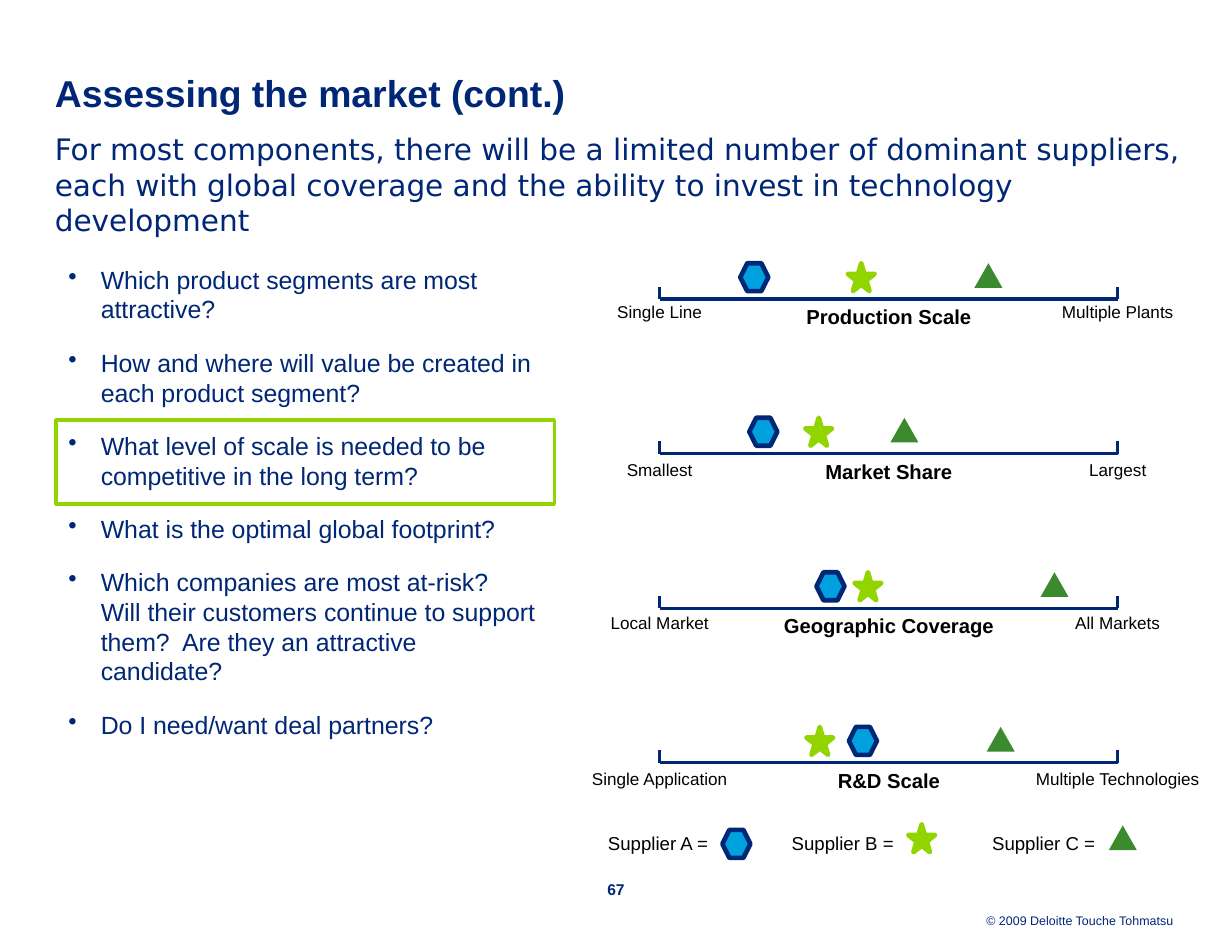
from dataclasses import dataclass

from lxml.etree import SubElement
from pptx import Presentation
from pptx.dml.color import RGBColor
from pptx.enum.shapes import MSO_CONNECTOR, MSO_SHAPE
from pptx.enum.text import MSO_ANCHOR, MSO_AUTO_SIZE, PP_ALIGN
from pptx.oxml.ns import qn
from pptx.util import Inches, Pt


@dataclass(frozen=True)
class Theme:
    navy: RGBColor = RGBColor(0x00, 0x27, 0x76)
    blue: RGBColor = RGBColor(0x00, 0xA1, 0xDE)
    lime: RGBColor = RGBColor(0x92, 0xD4, 0x00)
    green: RGBColor = RGBColor(0x3C, 0x8A, 0x2E)
    black: RGBColor = RGBColor(0, 0, 0)
    font: str = "Arial"
    lead_font: str = "DejaVu Sans"
    title: int = 24
    lead: int = 19
    body: int = 16
    scale: int = 13
    legend: int = 12
    label: int = 11
    page: int = 10
    footer: int = 8


T = Theme()

MARKERS = {
    "A": (MSO_SHAPE.HEXAGON, 0.25, 0.25, T.blue, T.navy),
    "B": (MSO_SHAPE.STAR_5_POINT, 0.24, 0.25, T.lime, T.lime),
    "C": (MSO_SHAPE.ISOSCELES_TRIANGLE, 0.25, 0.22, T.green, None),
}

QUESTIONS = [
    "Which product segments are most attractive?",
    "How and where will value be created in each product segment?",
    "What level of scale is needed to be competitive in the long term?",
    "What is the optimal global footprint?",
    "Which companies are most at-risk?  Will their customers continue to support them?  Are they an attractive candidate?",
    "Do I need/want deal partners?",
]

SCALES = [
    (("Production Scale", 1.7), ("Single Line", 0.97), ("Multiple Plants", 1.21),
     -0.03, {"A": 6.61, "B": 7.57, "C": 8.7}),
    (("Market Share", 1.35), ("Smallest", 0.79), ("Largest", 0.72),
     0, {"A": 6.69, "B": 7.19, "C": 7.95}),
    (("Geographic Coverage", 2.1), ("Local Market", 1.08), ("All Markets", 0.96),
     -0.01, {"A": 7.29, "B": 7.63, "C": 8.81 + 0.48}),
    (("R&D Scale", 1.12), ("Single Application", 1.43), ("Multiple Technologies", 1.7),
     0, {"A": 7.58, "B": 7.2, "C": 8.81}),
]

LEGEND = [
    ("A", 5.33, 1.1, 6.45, 7.41),
    ("B", 6.97, 1.12, 8.11, 7.36),
    ("C", 8.76, 1.13, 9.9, 7.37),
]


def style(tf, size, color, bold=False, font=T.font, align=None):
    for p in tf.paragraphs:
        p.alignment = align
        for r in p.runs:
            r.font.name = font
            r.font.size = Pt(size)
            r.font.bold = bold
            r.font.color.rgb = color


def clear_margins(tf):
    tf.margin_left = tf.margin_right = tf.margin_top = tf.margin_bottom = 0


def add_text(s, box, text, size, color, flush=True, **look):
    tf = s.shapes.add_textbox(*map(Inches, box)).text_frame
    tf.word_wrap = flush
    if flush:
        clear_margins(tf)
    else:
        tf.auto_size = MSO_AUTO_SIZE.SHAPE_TO_FIT_TEXT
    tf.text = text
    style(tf, size, color, **look)
    return tf


def add_line(s, x1, y1, x2, y2):
    c = s.shapes.add_connector(MSO_CONNECTOR.STRAIGHT, *map(Inches, (x1, y1, x2, y2)))
    c.line.color.rgb = T.navy
    c.line.width = Pt(2)
    SubElement(c._element.spPr, qn("a:effectLst"))


def add_marker(s, supplier, left, top):
    kind, width, height, fill, line = MARKERS[supplier]
    sp = s.shapes.add_shape(kind, *map(Inches, (left, top, width, height)))
    sp.shadow.inherit = False
    sp.fill.solid()
    sp.fill.fore_color.rgb = fill
    if line is None:
        sp.line.fill.background()
    else:
        sp.line.color.rgb = line
        sp.line.width = Pt(3)


def add_heading(s, left, top, width):
    title = s.shapes.title
    title.left, title.top, title.width, title.height = map(Inches, (left, top, width, 0.78))
    tf = title.text_frame
    clear_margins(tf)
    tf.vertical_anchor = MSO_ANCHOR.MIDDLE
    tf.text = "Assessing the market (cont.)"
    tf.paragraphs[0].line_spacing = 1.05
    style(tf, T.title, T.navy, bold=True, align=PP_ALIGN.LEFT)
    add_text(s, (left, top + 0.74, width, 1),
             "For most components, there will be a limited number of dominant suppliers, "
             "each with global coverage and the ability to invest in technology development",
             T.lead, T.navy, font=T.lead_font)


def add_questions(s, box):
    tf = add_text(s, box, "\n".join(QUESTIONS), T.body, T.navy)
    for p in tf.paragraphs:
        p.space_after = Pt(15)
        pPr = p._p.get_or_add_pPr()
        pPr.set("marL", str(Inches(0.29)))
        pPr.set("indent", str(-Inches(0.29)))
        SubElement(pPr, qn("a:buChar"), char="•")


def add_highlight(s, box):
    sp = s.shapes.add_shape(MSO_SHAPE.RECTANGLE, *map(Inches, box))
    sp.shadow.inherit = False
    sp.fill.background()
    sp.line.color.rgb = T.lime
    sp.line.width = Pt(2)


def add_scale(s, left, right, y, name, low, high, label_shift, suppliers):
    add_line(s, left, y, right, y)
    for x in (left, right):
        add_line(s, x, y, x, y - 0.11)
    middle = (left + right) / 2
    for (text, width), x, dy, height, size, bold in (
        (name, middle, 0, 0.32, T.scale, True),
        (low, left, label_shift, 0.29, T.label, False),
        (high, right, label_shift, 0.29, T.label, False),
    ):
        add_text(s, (x - width / 2, y + dy, width, height), text, size, T.black,
                 flush=False, bold=bold, align=PP_ALIGN.CENTER)
    for supplier, x in suppliers.items():
        add_marker(s, supplier, x, y - 0.32)


def add_legend(s, top):
    for supplier, left, width, marker_left, marker_top in LEGEND:
        add_text(s, (left, top, width, 0.3), f"Supplier {supplier} =", T.legend, T.black,
                 flush=False)
        add_marker(s, supplier, marker_left, marker_top)


def add_footer(s):
    tf = add_text(s, (5.33, 7.86, 0.34, 0.18), "67", T.page, T.navy,
                  bold=True, align=PP_ALIGN.CENTER)
    tf.paragraphs[0].line_spacing = Pt(12)
    tf = add_text(s, (7.7, 8.12, 2.78, 0.18), "© 2009 Deloitte Touche Tohmatsu",
                  T.footer, T.navy, align=PP_ALIGN.RIGHT)
    tf.paragraphs[0].line_spacing = Pt(12)


def main():
    prs = Presentation()
    prs.slide_width, prs.slide_height = Inches(11), Inches(8.5)
    s = prs.slides.add_slide(prs.slide_layouts[5])
    add_heading(s, 0.49, 0.43, 10.13)
    add_highlight(s, (0.5, 3.75, 4.45, 0.75))
    add_questions(s, (0.61, 2.36, 4.22, 5.7))
    for i, scale in enumerate(SCALES):
        add_scale(s, 5.89, 9.98, 2.67 + 1.38 * i, *scale)
    add_legend(s, 7.38)
    add_footer(s)
    prs.save("out.pptx")


if __name__ == "__main__":
    main()
